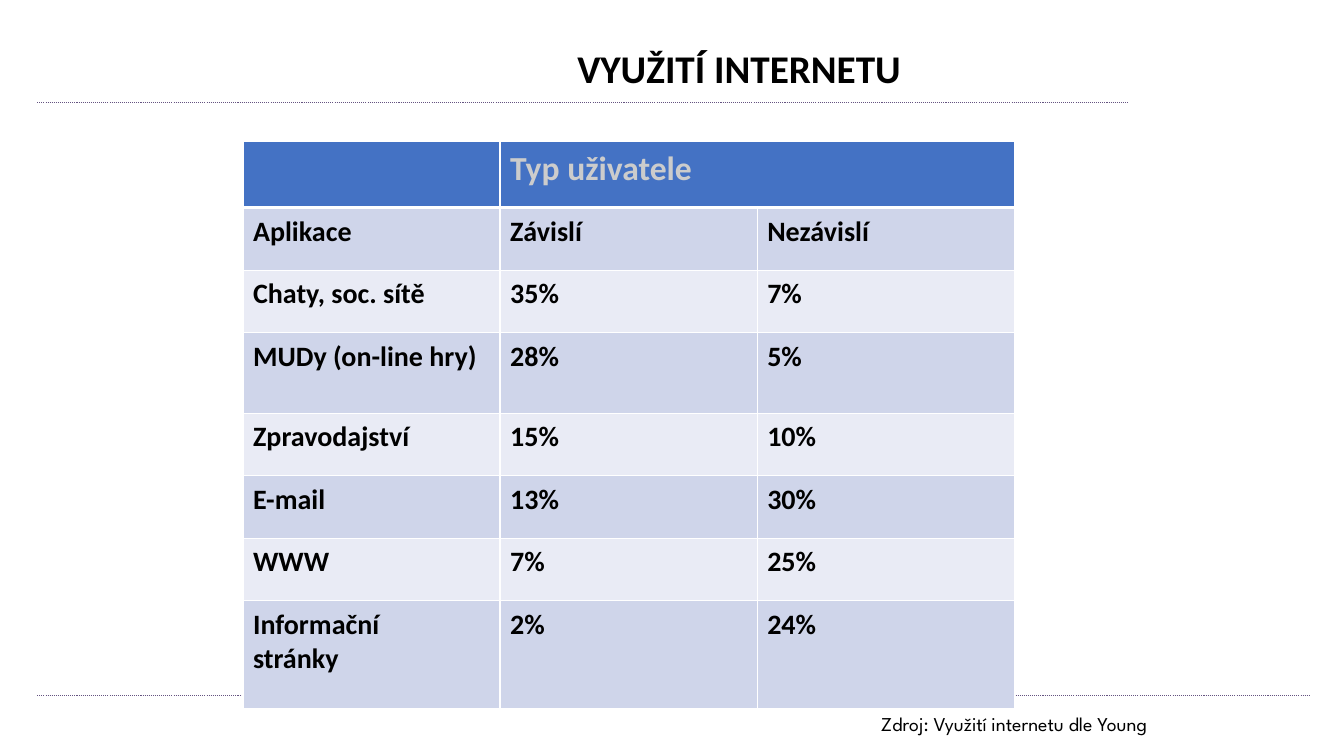
from lxml import etree
from pptx import Presentation
from pptx.dml.color import RGBColor
from pptx.enum.dml import MSO_LINE
from pptx.enum.shapes import MSO_CONNECTOR
from pptx.enum.text import MSO_ANCHOR, PP_ALIGN
from pptx.oxml.ns import qn
from pptx.util import Inches, Pt

STRAIGHT = MSO_CONNECTOR.STRAIGHT
DOTTED = MSO_LINE.ROUND_DOT
TOP = MSO_ANCHOR.TOP
CENTER, RIGHT = PP_ALIGN.CENTER, PP_ALIGN.RIGHT

TITLE = "VYUŽITÍ INTERNETU"
SOURCE = "Zdroj: Využití internetu dle Young"
USAGE = [
    ("", "Typ uživatele", ""),
    ("Aplikace", "Závislí", "Nezávislí"),
    ("Chaty, soc. sítě", "35%", "7%"),
    ("MUDy (on-line hry)", "28%", "5%"),
    ("Zpravodajství", "15%", "10%"),
    ("E-mail", "13%", "30%"),
    ("WWW", "7%", "25%"),
    ("Informační\nstránky", "2%", "24%"),
]
COLORS = {"rule": "655481", "text": "000000", "header": "4472C4",
          "header_text": "CCCCCC", "odd": "CFD5EA", "even": "E9EBF5",
          "border": "FFFFFF"}
FORMATS = {
    "title": {"name": "Calibri", "size": Pt(28), "bold": True},
    "source": {"name": "League Spartan", "size": Pt(14), "bold": False},
    "header": {"name": "Calibri", "size": Pt(24), "bold": True},
    "body": {"name": "Calibri", "size": Pt(20), "bold": True},
}
SLIDE_SIZE = (13.33, 7.5)
RULES = [(0.37, 11.18, 1.02), (0.37, 13, 6.9)]  # left, right, height on page
TITLE_BOX = (3, 0.44, 8.66, 0.74)
SOURCE_BOX = (7.38, 7.01, 4.1, 0.3)
TABLE_LEFT, TABLE_TOP, COLUMN_WIDTH = 2.41, 1.4, 2.55
ROW_HEIGHT = 0.62
SPECIAL_HEIGHTS = {0: 0.66, 3: 0.8, 7: 1.07}
MARGINS = {"margin_left": 0.1, "margin_right": 0.1,
           "margin_top": 0.07, "margin_bottom": 0.07}


def color(name):
    return RGBColor.from_string(COLORS[name])


def style(font, kind, color_name="text"):
    for name, value in FORMATS[kind].items():
        setattr(font, name, value)
    font.color.rgb = color(color_name)


def add_rule(page, left, right, height):
    ends = [Inches(value) for value in (left, height, right, height)]
    rule = page.shapes.add_connector(STRAIGHT, *ends)
    rule.line.color.rgb = color("rule")
    rule.line.width = Pt(0.75)
    rule.line.dash_style = DOTTED
    etree.SubElement(rule._element.spPr, qn("a:effectLst"))


def add_label(page, area, text, kind, alignment):
    box = page.shapes.add_textbox(*[Inches(value) for value in area])
    frame = box.text_frame
    frame.word_wrap = True
    frame.vertical_anchor = TOP
    para = frame.paragraphs[0]
    para.alignment = alignment
    span = para.add_run()
    span.text = text
    style(span.font, kind)
    return para


def add_borders(cell, bottom_width):
    properties = cell._tc.get_or_add_tcPr()
    for side in "LRTB":
        width = bottom_width if side == "B" else 1
        line = etree.SubElement(properties, qn(f"a:ln{side}"), w=str(Pt(width)))
        fill = etree.SubElement(line, qn("a:solidFill"))
        etree.SubElement(fill, qn("a:srgbClr"), val=COLORS["border"])


def fill_cell(cell, text, row):
    is_header = row == 0
    add_borders(cell, 3 if is_header else 1)
    cell.fill.solid()
    cell.fill.fore_color.rgb = color(
        "header" if is_header else "odd" if row % 2 else "even")
    for name, value in MARGINS.items():
        setattr(cell, name, Inches(value))
    cell.text = text
    for para in cell.text_frame.paragraphs:
        for span in para.runs:
            if is_header:
                style(span.font, "header", "header_text")
            else:
                style(span.font, "body")


def add_usage_table(page):
    heights = [SPECIAL_HEIGHTS.get(row, ROW_HEIGHT) for row in range(len(USAGE))]
    columns = len(USAGE[0])
    table = page.shapes.add_table(
        len(USAGE), columns, Inches(TABLE_LEFT), Inches(TABLE_TOP),
        Inches(columns * COLUMN_WIDTH), Inches(sum(heights))).table
    for column in table.columns:
        column.width = Inches(COLUMN_WIDTH)
    for row, texts in enumerate(USAGE):
        table.rows[row].height = Inches(heights[row])
        for column, text in enumerate(texts):
            fill_cell(table.cell(row, column), text, row)
    table.cell(0, 1).merge(table.cell(0, 2))


def main():
    deck = Presentation()
    deck.slide_width, deck.slide_height = [Inches(side) for side in SLIDE_SIZE]
    page = deck.slides.add_slide(deck.slide_layouts[6])
    for rule in RULES:
        add_rule(page, *rule)
    title = add_label(page, TITLE_BOX, TITLE, "title", CENTER)
    title.line_spacing = 0.9
    add_label(page, SOURCE_BOX, SOURCE, "source", RIGHT)
    add_usage_table(page)
    deck.save("out.pptx")


if __name__ == "__main__":
    main()
